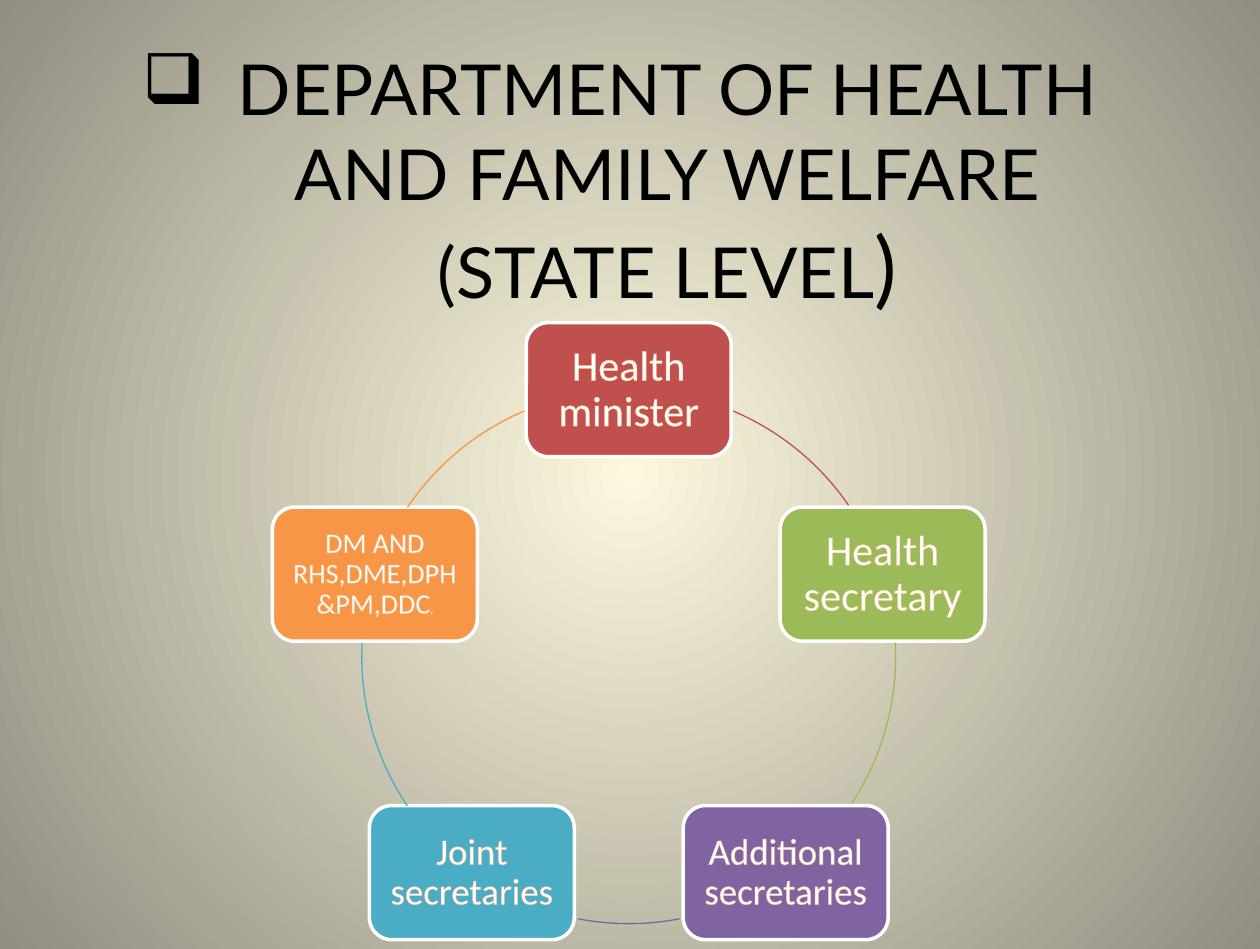
import math
from dataclasses import dataclass

import pptx
import pptx.dml.color
import pptx.enum.shapes
import pptx.enum.text
import pptx.oxml
import pptx.oxml.ns
import pptx.util

PX = 9144  # EMU in one px, 100 px to the inch


@dataclass(frozen=True)
class Theme:
    glow: str = "FCF7DD"
    edge: str = "918E81"
    title_ink: str = "000000"
    title_outline: str = "0070C0"
    node_ink: str = "FFFFFF"
    node_outline: str = "FAC090"
    title_font: str = "Lato"
    node_font: str = "Calibri"
    title_size: int = 40
    bracket_size: int = 48
    large: int = 24
    medium: int = 21
    small: int = 16
    tiny: int = 7
    node_border: float = 2
    hairline: float = 0.75


THEME = Theme()

# Ring of offices, clockwise from the top
RING_X, RING_Y, RING_RADIUS = 497, 519, 211
NODE_WIDTH, NODE_HEIGHT = 162, 106

# Fill, inset, text runs (wording, size, outlined), start and end of the arc in degrees
OFFICES = [
    ("C0504D", 10, [("Health minister", THEME.large, True)], (293, 326)),
    ("9BBB59", 10, [("Health secretary", THEME.large, True)], (357, 34)),
    ("8064A2", 9, [("Additional secretaries", THEME.medium, True)], (79, 101)),
    ("4BACC6", 9, [("Joint secretaries", THEME.medium, True)], (146, 183)),
    ("F79646", 7, [("DM AND RHS,DME,DPH&PM,DDC", THEME.small, True),
                   (",", THEME.tiny, False)], (214, 247)),
]


def px(length):
    return pptx.util.Emu(round(length * PX))


def rgb(colour):
    return pptx.dml.color.RGBColor.from_string(colour)


def xml(markup):
    namespace = pptx.oxml.ns.nsdecls("a")
    return pptx.oxml.parse_xml(markup.replace(">", f" {namespace}>", 1)
                               if "/>" not in markup.split(">")[0] + ">"
                               else markup.replace("/>", f" {namespace}/>", 1))


def add_run(paragraph, wording, size, font, ink, outline=None):
    run = paragraph.add_run()
    run.text = wording
    run.font.size = pptx.util.Pt(size)
    run.font.name = font
    run.font.color.rgb = rgb(ink)
    if outline:
        width = pptx.util.Pt(THEME.hairline)
        run.font._element.insert(0, xml(
            f'<a:ln w="{width}"><a:solidFill><a:srgbClr val="{outline}"/>'
            '</a:solidFill></a:ln>'))


def set_background(slide):
    fill = slide.background.fill
    fill.gradient()
    for stop, colour in zip(fill.gradient_stops, (THEME.glow, THEME.edge)):
        stop.color.rgb = rgb(colour)
    fill.gradient_stops[0].position = 0
    fill.gradient_stops[1].position = 1
    # Turn the linear gradient into a round one
    gradient = slide.element.find(".//" + pptx.oxml.ns.qn("a:gradFill"))
    linear = gradient.find(pptx.oxml.ns.qn("a:lin"))
    gradient.replace(linear, xml(
        '<a:path path="circle">'
        '<a:fillToRect l="50000" t="50000" r="50000" b="50000"/></a:path>'))


def set_title(slide):
    title = slide.shapes.title
    title.left, title.top, title.width, title.height = map(px, (65, 99, 850, 87))
    frame = title.text_frame
    frame.auto_size = pptx.enum.text.MSO_AUTO_SIZE.NONE
    frame.vertical_anchor = pptx.enum.text.MSO_ANCHOR.MIDDLE
    frame.word_wrap = True
    heading = frame.paragraphs[0]
    heading.alignment = pptx.enum.text.PP_ALIGN.CENTER
    # Hanging bullet
    properties = heading._p.get_or_add_pPr()
    properties.set("marL", str(px(75)))
    properties.set("indent", str(px(-75)))
    properties.append(xml('<a:buFontTx/>'))
    properties.append(xml('<a:buChar char="❑"/>'))
    add_run(heading, "DEPARTMENT OF HEALTH AND FAMILY WELFARE (STATE LEVEL",
            THEME.title_size, THEME.title_font, THEME.title_ink, THEME.title_outline)
    add_run(heading, ")", THEME.bracket_size, THEME.title_font, THEME.title_ink)


def add_office(slide, angle, colour, inset, runs):
    centre_x = RING_X + RING_RADIUS * math.cos(angle)
    centre_y = RING_Y + RING_RADIUS * math.sin(angle)
    office = slide.shapes.add_shape(
        pptx.enum.shapes.MSO_SHAPE.ROUNDED_RECTANGLE,
        px(centre_x - NODE_WIDTH / 2), px(centre_y - NODE_HEIGHT / 2),
        px(NODE_WIDTH), px(NODE_HEIGHT))
    office.shadow.inherit = False
    office.fill.solid()
    office.fill.fore_color.rgb = rgb(colour)
    office.line.color.rgb = rgb(THEME.node_ink)
    office.line.width = pptx.util.Pt(THEME.node_border)
    frame = office.text_frame
    frame.word_wrap = True
    frame.vertical_anchor = pptx.enum.text.MSO_ANCHOR.MIDDLE
    frame.margin_left = frame.margin_right = px(inset)
    frame.margin_top = frame.margin_bottom = px(inset)
    label = frame.paragraphs[0]
    label.alignment = pptx.enum.text.PP_ALIGN.CENTER
    label.line_spacing = 0.9
    for wording, size, outlined in runs:
        add_run(label, wording, size, THEME.node_font, THEME.node_ink,
                THEME.node_outline if outlined else None)


def add_arc(slide, colour, span):
    arc = slide.shapes.add_shape(
        pptx.enum.shapes.MSO_SHAPE.ARC,
        px(RING_X - RING_RADIUS), px(RING_Y - RING_RADIUS),
        px(2 * RING_RADIUS), px(2 * RING_RADIUS))
    arc.shadow.inherit = False
    arc.fill.background()
    arc.line.color.rgb = rgb(colour)
    arc.line.width = pptx.util.Pt(THEME.hairline)
    for index, degrees in enumerate(span):
        arc.adjustments[index] = degrees * 0.6  # 60000 units a degree, over 100000


def main():
    deck = pptx.Presentation()
    deck.slide_width, deck.slide_height = px(996), px(750)
    slide = deck.slides.add_slide(deck.slide_layouts[5])
    set_background(slide)
    set_title(slide)
    # Offices and the arcs that lead on from them
    for place, (colour, inset, runs, span) in enumerate(OFFICES):
        angle = 2 * math.pi * place / len(OFFICES) - math.pi / 2
        add_office(slide, angle, colour, inset, runs)
        add_arc(slide, colour, span)
    deck.save("out.pptx")


if __name__ == "__main__":
    main()
